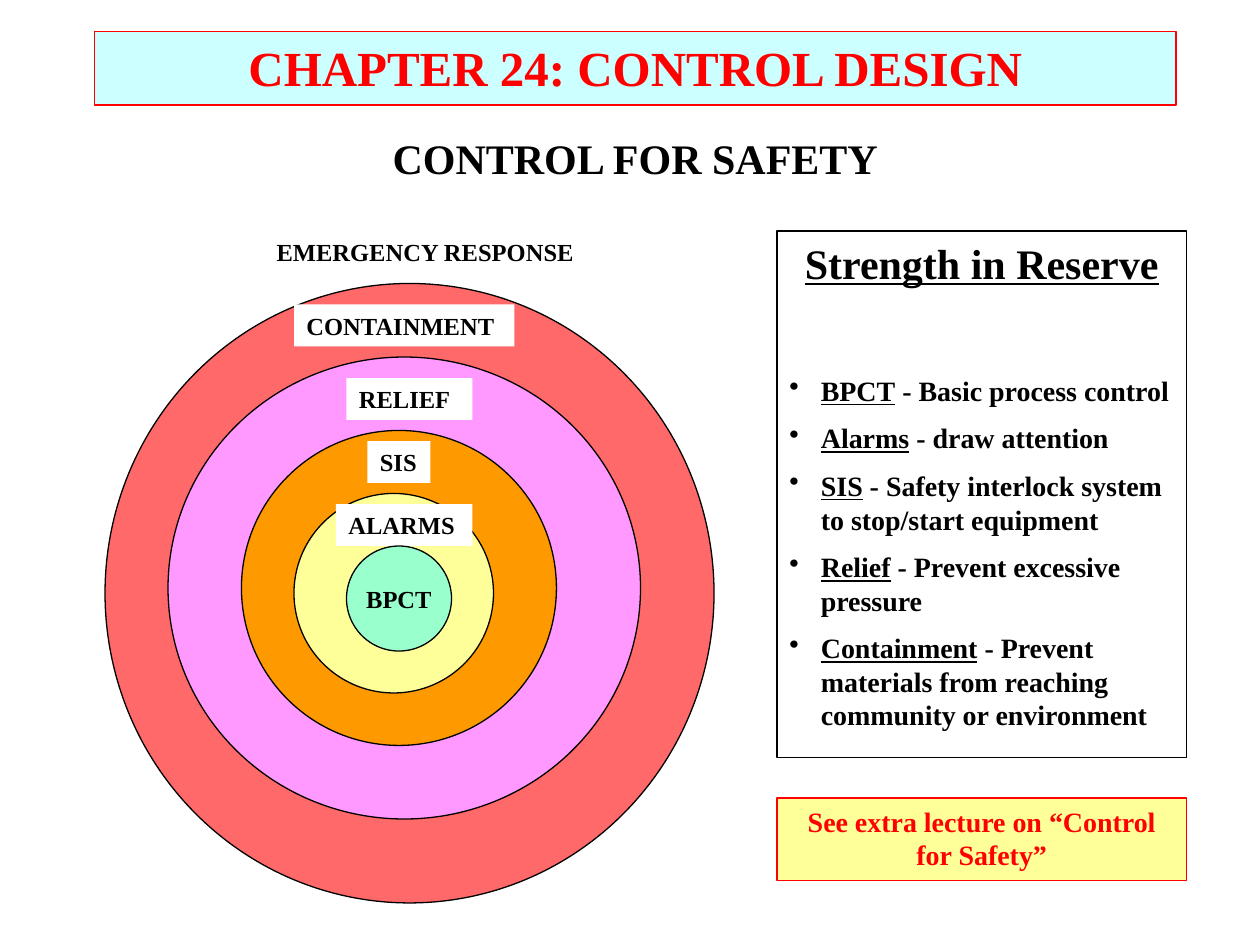
"""Build the control-for-safety slide with nested protection layers."""
from dataclasses import dataclass

import pptx
import pptx.dml.color
import pptx.enum.shapes
import pptx.enum.text
import pptx.oxml
import pptx.oxml.ns
import pptx.util

Pt = pptx.util.Pt
SHAPE = pptx.enum.shapes.MSO_SHAPE
ALIGN = pptx.enum.text.PP_ALIGN
ANCHOR = pptx.enum.text.MSO_ANCHOR


@dataclass(frozen=True)
class Theme:
    """Colours, type sizes and spacing of the slide."""
    font: str = "Times New Roman"
    black: str = "000000"
    white: str = "FFFFFF"
    red: str = "FF0000"
    cyan: str = "CCFFFF"
    coral: str = "FF6969"
    pink: str = "FF99FF"
    orange: str = "FF9900"
    yellow: str = "FFFF99"
    mint: str = "99FFCC"
    title: int = 28
    heading: int = 24
    body: int = 16
    label: int = 14
    line: float = 0.75
    indent: int = 18
    item_gap: int = 8
    list_gap: int = 49


THEME = Theme()

RINGS = [
    ((60, 162, 348, 354), THEME.coral),
    ((96, 204, 270, 264), THEME.pink),
    ((138, 246, 180, 180), THEME.orange),
    ((168, 282, 114, 114), THEME.yellow),
]
LABELS = [
    ("ALARMS", (192, 288, 78, 24)),
    ("SIS", (210, 252, 36, 24)),
    ("RELIEF", (198, 216, 72, 24)),
    ("CONTAINMENT", (168, 174, 126, 24)),
]
LAYERS = [
    ("BPCT", "Basic process control"),
    ("Alarms", "draw attention"),
    ("SIS", "Safety interlock system to stop/start equipment"),
    ("Relief", "Prevent excessive pressure"),
    ("Containment", "Prevent materials from reaching community or environment"),
]


def rgb(colour):
    """Return the colour object for a hex string."""
    return pptx.dml.color.RGBColor.from_string(colour)


def add_box(shapes, kind, bounds, fill=None, line=None):
    """Add a preset shape with top-anchored, wrapping text."""
    box = shapes.add_shape(kind, *map(Pt, bounds))
    box.shadow.inherit = False
    if fill:
        box.fill.solid()
        box.fill.fore_color.rgb = rgb(fill)
    else:
        box.fill.background()
    if line:
        box.line.color.rgb = rgb(line)
        box.line.width = Pt(THEME.line)
    else:
        box.line.fill.background()
    box.text_frame.word_wrap = True
    box.text_frame.vertical_anchor = ANCHOR.TOP
    return box


def add_span(para, text, size, colour=THEME.black, underline=False):
    """Add one bold run to a paragraph."""
    span = para.add_run()
    span.text = text
    span.font.name = THEME.font
    span.font.size = Pt(size)
    span.font.bold = True
    span.font.underline = underline
    span.font.color.rgb = rgb(colour)


def write_line(box, text, size, colour=THEME.black, align=ALIGN.CENTER, underline=False):
    """Write the first paragraph of a box."""
    para = box.text_frame.paragraphs[0]
    para.alignment = align
    add_span(para, text, size, colour, underline)


def add_caption(shapes, bounds, text, size):
    """Add a centred text box without fill or line."""
    box = shapes.add_textbox(*map(Pt, bounds))
    box.text_frame.word_wrap = True
    write_line(box, text, size)


def add_bullet(box, term, meaning, gap):
    """Add a bulleted paragraph with an underlined term."""
    para = box.text_frame.add_paragraph()
    para.alignment = ALIGN.LEFT
    para.space_before = Pt(gap)
    properties = para._p.get_or_add_pPr()
    properties.set("marL", str(Pt(THEME.indent)))
    properties.set("indent", str(-Pt(THEME.indent)))
    bullet = pptx.oxml.parse_xml(
        f'<a:buChar {pptx.oxml.ns.nsdecls("a")} char="•"/>')
    properties.append(bullet)
    add_span(para, term, THEME.body, underline=True)
    add_span(para, f" - {meaning}", THEME.body)


def add_diagram(page):
    """Add the grouped rings with their labels."""
    shapes = page.shapes.add_group_shape().shapes
    for bounds, fill in RINGS:
        add_box(shapes, SHAPE.OVAL, bounds, fill, THEME.black)
    for text, bounds in LABELS:
        label = add_box(shapes, SHAPE.RECTANGLE, bounds, THEME.white)
        write_line(label, text, THEME.label, align=ALIGN.LEFT)
    add_caption(shapes, (138, 132, 210, 24), "EMERGENCY RESPONSE", THEME.label)
    core = add_box(shapes, SHAPE.OVAL, (198, 312, 60, 60), THEME.mint, THEME.black)
    core.text_frame.word_wrap = False
    core.text_frame.vertical_anchor = ANCHOR.MIDDLE
    write_line(core, "BPCT", THEME.label)


def add_panel(page):
    """Add the framed list of protection layers."""
    panel = add_box(page.shapes, SHAPE.RECTANGLE, (444, 132, 234, 301), line=THEME.black)
    write_line(panel, "Strength in Reserve", THEME.heading, underline=True)
    for index, (term, meaning) in enumerate(LAYERS):
        add_bullet(panel, term, meaning, THEME.item_gap if index else THEME.list_gap)


def main():
    """Build and save the deck."""
    deck = pptx.Presentation()
    deck.slide_width, deck.slide_height = Pt(720), Pt(540)
    page = deck.slides.add_slide(deck.slide_layouts[6])
    title = add_box(page.shapes, SHAPE.RECTANGLE, (54, 18, 618, 42), THEME.cyan, THEME.red)
    write_line(title, "CHAPTER 24: CONTROL DESIGN", THEME.title, THEME.red)
    add_diagram(page)
    add_panel(page)
    add_caption(page.shapes, (54, 72, 618, 36), "CONTROL FOR SAFETY", THEME.heading)
    note = add_box(page.shapes, SHAPE.RECTANGLE, (444, 456, 234, 47), THEME.yellow, THEME.red)
    write_line(note, "See extra lecture on “Control for Safety”", THEME.body, THEME.red)
    deck.save("out.pptx")


if __name__ == "__main__":
    main()
